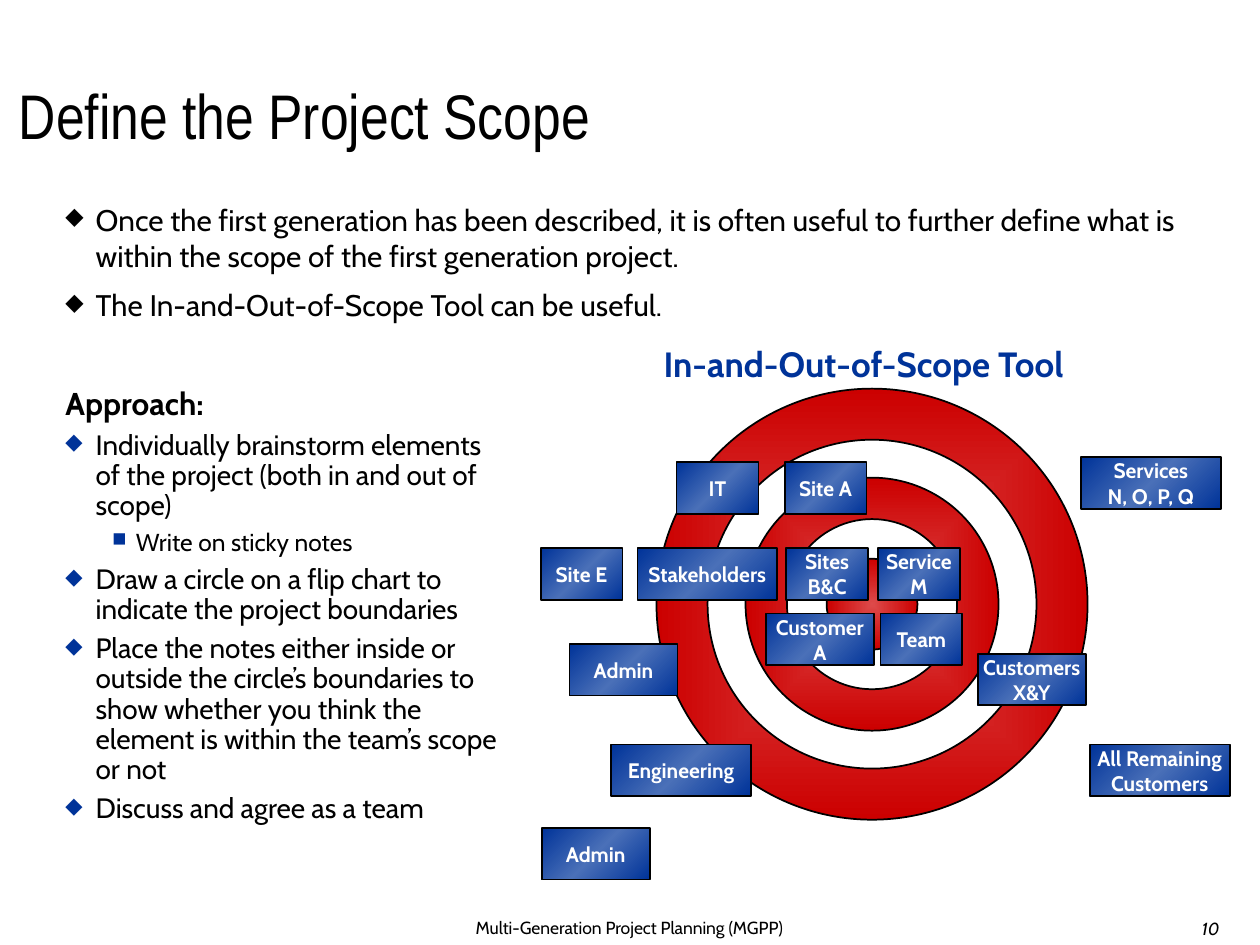
import pptx
import pptx.util
import pptx.oxml
import pptx.oxml.ns
import pptx.dml.color
import pptx.enum.text
import pptx.enum.shapes

Cm, Pt = pptx.util.Cm, pptx.util.Pt
qn = pptx.oxml.ns.qn
RGB = pptx.dml.color.RGBColor.from_string
Align = pptx.enum.text.PP_ALIGN
Anchor = pptx.enum.text.MSO_ANCHOR
Kind = pptx.enum.shapes.MSO_SHAPE
NS = 'xmlns:a="http://schemas.openxmlformats.org/drawingml/2006/main"'
INK = {"black": "000000", "white": "FFFFFF", "blue": "003399",
       "sky": "4A70B8", "red": "CC0000", "pink": "DD4A4A"}

deck = pptx.Presentation()
deck.slide_width, deck.slide_height = Cm(25.4), Cm(19.05)
slide = deck.slides.add_slide(deck.slide_layouts[6])


def write(shape, text, size, ink="black", face="Cabin", bold=False, align=Align.LEFT):
    """Fill a shape with text and format every run."""
    frame = shape.text_frame
    frame.text = text
    for para in frame.paragraphs:
        para.alignment = align
        for run in para.runs:
            font = run.font
            font.size, font.name, font.bold = Pt(size), face, bold
            font.color.rgb = RGB(INK[ink])
    return frame


def draw(kind, x, y, w, h, stops, shade):
    """Add an outlined shape; one colour is solid, more make a gradient."""
    shape = slide.shapes.add_shape(kind, Cm(x), Cm(y), Cm(w), Cm(h))
    shape.shadow.inherit = False
    shape.line.color.rgb = RGB(INK["black"])
    shape.line.width = Pt(1)
    shape.fill.solid()
    shape.fill.fore_color.rgb = RGB(INK[stops[0]])
    if len(stops) > 1:
        step = 100000 // (len(stops) - 1)
        marks = "".join(f'<a:gs pos="{i * step}"><a:srgbClr val="{INK[c]}"/></a:gs>'
                        for i, c in enumerate(stops))
        grad = pptx.oxml.parse_xml(
            f'<a:gradFill {NS} rotWithShape="1"><a:gsLst>{marks}</a:gsLst>{shade}</a:gradFill>')
        props = shape._element.spPr
        props.replace(props.find(qn("a:solidFill")), grad)
    return shape


# Title, tool heading and footer: text, place, size, colour, face, bold, align, anchor
labels = [
    ("10", (23.98, 18.42, 1.04, 0.63), 10, "black", "Cabin", False, Align.LEFT, Anchor.BOTTOM),
    ("Multi-Generation Project Planning (MGPP)", (4.11, 18.36, 17.15, 0.69),
     10, "black", "Cabin", False, Align.CENTER, Anchor.TOP),
    ("Define the Project Scope", (0.13, 0.03, 21.11, 3.18),
     36, "black", "Arial Narrow", False, Align.LEFT, Anchor.BOTTOM),
    ("In-and-Out-of-Scope Tool", (12.57, 6.78, 9.68, 1.09),
     20, "blue", "Cabin", True, Align.CENTER, Anchor.TOP),
]
for text, place, size, ink, face, bold, align, anchor in labels:
    box = slide.shapes.add_textbox(*map(Cm, place))
    frame = write(box, text, size, ink, face, bold, align)
    frame.word_wrap = True
    frame.vertical_anchor = anchor
    para = frame.paragraphs[0]
    if text == "10":
        para.runs[0].font.italic = True
    if face == "Arial Narrow":
        para.line_spacing = 0.9

# Bulleted text: place, bullet colour, line spacing, space before, (text, size, bullet)
lists = [
    ((1.07, 3.94, 23.67, 13.89), "black", 1.0, 8, [
        ("Once the first generation has been described, it is often useful to further "
         "define what is within the scope of the first generation project.", 17, "◆"),
        ("The In-and-Out-of-Scope Tool can be useful.", 17, "◆")]),
    ((1.07, 7.7, 9.12, 9.63), "blue", 0.9, 5, [
        ("Approach:", 18, ""),
        ("Individually brainstorm elements of the project (both in and out of scope)", 16, "◆"),
        ("Write on sticky notes", 14, "■"),
        ("Draw a circle on a flip chart to indicate the project boundaries", 16, "◆"),
        ("Place the notes either inside or outside the circle’s boundaries to show "
         "whether you think the element is within the team’s scope or not", 16, "◆"),
        ("Discuss and agree as a team", 16, "◆")]),
]
for place, ink, space, gap, items in lists:
    box = slide.shapes.add_textbox(*map(Cm, place))
    frame = write(box, "\n".join(item[0] for item in items), 16)
    frame.word_wrap = True
    if ink == "blue":
        frame.margin_right = 0
    for para, (text, size, mark) in zip(frame.paragraphs, items):
        font = para.runs[0].font
        font.size, font.bold = Pt(size), not mark
        para.line_spacing, para.space_before = space, Pt(gap)
        sub = mark == "■"
        para.level = int(sub)
        props = para._p.get_or_add_pPr()
        props.set("marL", str(Cm(1.42 if sub else 0.61)))
        props.set("indent", str(-Cm(0.48 if sub else 0.61)))
        if mark:
            for tag in (f'<a:buClr {NS}><a:srgbClr val="{INK[ink]}"/></a:buClr>',
                        f'<a:buSzPct {NS} val="80000"/>',
                        f'<a:buChar {NS} char="{mark}"/>'):
                props.append(pptx.oxml.parse_xml(tag))

# Target: rings around one centre, red and white in turn
glow = '<a:path path="shape"><a:fillToRect l="50000" t="50000" r="50000" b="50000"/></a:path>'
for i, wide in enumerate((8.69, 6.63, 5.1, 3.43, 1.83)):
    stops = ("white",) if i % 2 else ("pink", "red")
    draw(Kind.OVAL, 17.58 - wide / 2, 12.18 - wide / 2, wide, wide, stops, glow)

# Sticky notes: text, left, top, width
big, mid, small = 2.82, 2.18, 1.65
notes = [
    ("Engineering", 12.32, 15.01, big),
    ("All Remaining\nCustomers", 21.97, 15.01, big),
    ("Services\nN, O, P, Q", 21.79, 9.22, big),
    ("Admin", 10.92, 16.69, mid),
    ("Admin", 11.48, 12.98, mid),
    ("Customer\nA", 15.44, 12.37, mid),
    ("Customers\nX&Y", 19.71, 13.18, mid),
    ("Team", 17.75, 12.37, small),
    ("Site A", 15.82, 9.32, small),
    ("IT", 13.64, 9.32, small),
    ("Stakeholders", 12.85, 11.05, big),
    ("Sites\nB&C", 15.85, 11.05, small),
    ("Service\nM", 17.7, 11.05, small),
    ("Site E", 10.9, 11.05, small),
]
for text, x, y, wide in notes:
    note = draw(Kind.RECTANGLE, x, y, wide, 1.04, ("blue", "sky", "blue"),
                '<a:lin ang="2700000" scaled="1"/>')
    frame = write(note, text, 12, "white", bold=True, align=Align.CENTER)
    frame.word_wrap = False
    frame.vertical_anchor = Anchor.MIDDLE

deck.save("out.pptx")
